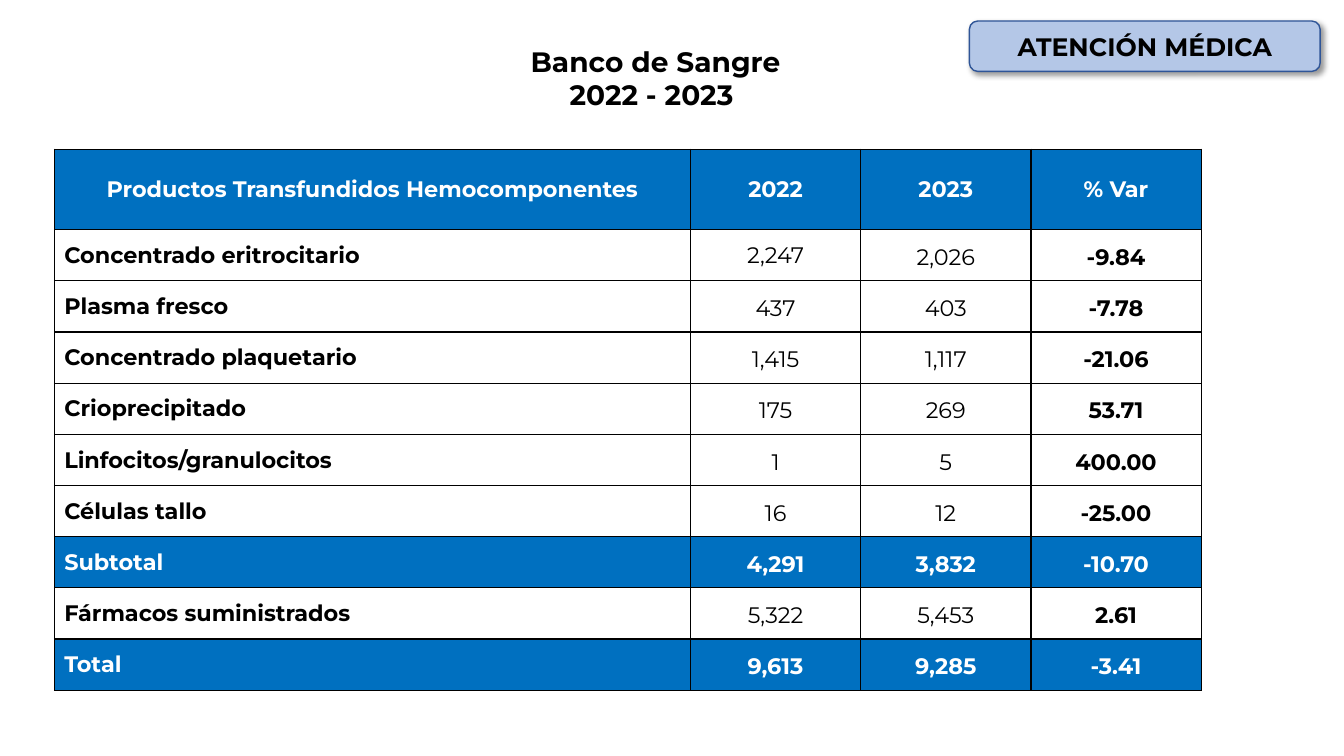
"""Builds the blood bank slide with its table of transfused products."""
from typing import NamedTuple

from lxml.etree import SubElement as Sub
from pptx import Presentation
from pptx.dml.color import RGBColor as Rgb
from pptx.enum.shapes import MSO_SHAPE as Kind
from pptx.enum.text import MSO_ANCHOR as Anchor, PP_ALIGN as Align
from pptx.oxml.ns import qn
from pptx.util import Cm, Pt

HUES = {"blue": "0070C0", "pale": "B4C7E7", "navy": "2F5597",
        "black": "000000", "white": "FFFFFF"}
FONT = "Montserrat"
WIDTHS = (16.03, 4.29, 4.29, 4.29)
HEAD, STEP = 2.03, 1.285


class Box(NamedTuple):
    left: float
    top: float
    width: float
    height: float
    lines: tuple[str, ...]
    size: int
    fill: str = ""
    edge: str = ""


class Row(NamedTuple):
    texts: tuple[str, str, str, str]
    dark: bool = False


TITLE = Box(6.17, 0.91, 20.5, 2.11, (" Banco de Sangre", " 2022 - 2023 "), 20)
BADGE = Box(24.43, 0.53, 8.84, 1.27, ("ATENCIÓN MÉDICA",), 18, "pale", "navy")
ROWS = (
    Row(("Productos Transfundidos Hemocomponentes", "2022", "2023", "% Var"), True),
    Row(("Concentrado eritrocitario", "2,247", "2,026", "-9.84")),
    Row(("Plasma fresco", "437", "403", "-7.78")),
    Row(("Concentrado plaquetario", "1,415", "1,117", "-21.06")),
    Row(("Crioprecipitado", "175", "269", "53.71")),
    Row(("Linfocitos/granulocitos", "1", "5", "400.00")),
    Row(("Células tallo", "16", "12", "-25.00")),
    Row(("Subtotal", "4,291", "3,832", "-10.70"), True),
    Row(("Fármacos suministrados", "5,322", "5,453", "2.61")),
    Row(("Total", "9,613", "9,285", "-3.41"), True),
)


def tint(name: str) -> Rgb:
    """Return the named colour."""
    return Rgb.from_string(HUES[name])


def write(para, text: str, size: int, hue: str, bold: bool = True) -> None:
    """Add one run of text to a paragraph."""
    run = para.add_run()
    run.text = text
    font = run.font
    font.name, font.size, font.bold = FONT, Pt(size), bold
    font.color.rgb = tint(hue)


def shade(shape) -> None:
    """Give a shape a soft shadow to the lower right."""
    props = shape.fill._xPr
    cast = Sub(props.find(qn("a:effectLst")), qn("a:outerShdw"), blurRad=str(Pt(4)),
               dist=str(Pt(3)), dir="2700000", algn="tl", rotWithShape="0")
    black = Sub(cast, qn("a:srgbClr"), val=HUES["black"])
    Sub(black, qn("a:alpha"), val="40000")


def draw(slide, box: Box) -> None:
    """Draw a rounded box with centred lines of text."""
    shape = slide.shapes.add_shape(Kind.ROUNDED_RECTANGLE, Cm(box.left), Cm(box.top),
                                   Cm(box.width), Cm(box.height))
    shape.shadow.inherit = False
    if box.fill:
        shape.fill.solid()
        shape.fill.fore_color.rgb = tint(box.fill)
        shape.line.color.rgb = tint(box.edge)
        shape.line.width = Pt(1)
        shade(shape)
    else:
        shape.fill.background()
        shape.line.fill.background()
    frame = shape.text_frame
    frame.word_wrap = True
    frame.vertical_anchor = Anchor.MIDDLE
    for i, line in enumerate(box.lines):
        para = frame.add_paragraph() if i else frame.paragraphs[0]
        para.alignment = Align.CENTER
        write(para, line, box.size, "black")


def border(cell) -> None:
    """Rule all four sides of a cell in black."""
    props = cell._tc.get_or_add_tcPr()
    for i, side in enumerate("LRTB"):
        line = Sub(props, qn(f"a:ln{side}"), w=str(Pt(1)))
        Sub(Sub(line, qn("a:solidFill")), qn("a:srgbClr"), val=HUES["black"])
        props.insert(i, line)


def fill(cell, row: Row, r: int, c: int) -> None:
    """Set the look and the text of one table cell."""
    if row.dark:
        cell.fill.solid()
        cell.fill.fore_color.rgb = tint("blue")
    else:
        cell.fill.background()
    border(cell)
    plain = r == 0 or c == 0 or (r, c) == (1, 1)
    cell.vertical_anchor = Anchor.MIDDLE
    cell.margin_left = cell.margin_right = Cm(0.25 if plain else 0.18)
    cell.margin_top = cell.margin_bottom = Cm(0.25)
    para = cell.text_frame.paragraphs[0]
    para.alignment = Align.LEFT if r and c == 0 else Align.CENTER
    if not plain:
        para.line_spacing = 1.15
    write(para, row.texts[c], 16, "white" if row.dark else "black",
          row.dark or c in (0, 3))


def tabulate(slide) -> None:
    """Draw the table of products."""
    high = HEAD + STEP * (len(ROWS) - 1)
    table = slide.shapes.add_table(len(ROWS), len(WIDTHS), Cm(1.37), Cm(3.76),
                                   Cm(sum(WIDTHS)), Cm(high)).table
    table.first_row = table.horz_banding = False
    for col, width in zip(table.columns, WIDTHS):
        col.width = Cm(width)
    for r, row in enumerate(ROWS):
        table.rows[r].height = Cm(STEP if r else HEAD)
        for c in range(len(WIDTHS)):
            fill(table.cell(r, c), row, r, c)


def main() -> None:
    """Build and save the slide."""
    deck = Presentation()
    deck.slide_width, deck.slide_height = Cm(33.87), Cm(19.05)
    slide = deck.slides.add_slide(deck.slide_layouts[6])
    draw(slide, TITLE)
    tabulate(slide)
    draw(slide, BADGE)
    deck.save("out.pptx")


if __name__ == "__main__":
    main()
